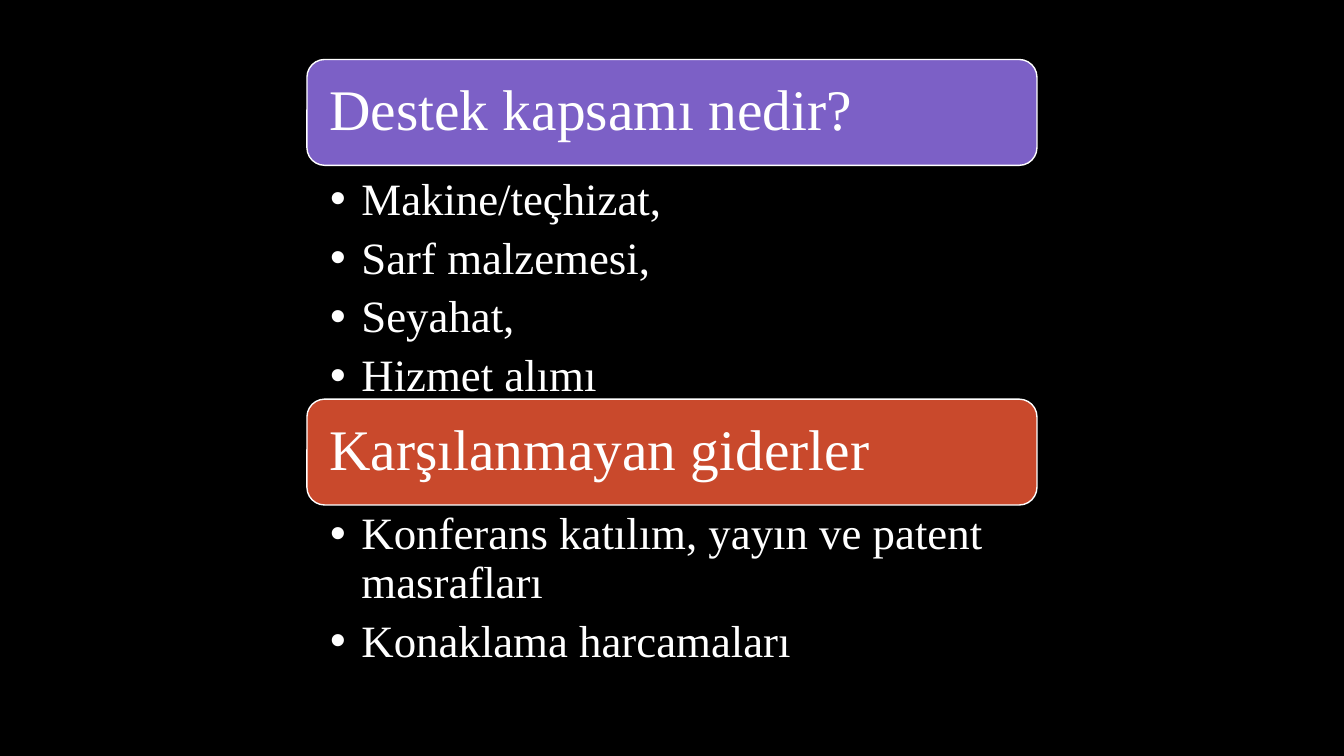
from pptx import Presentation
from pptx.dml.color import RGBColor
from pptx.enum.shapes import MSO_SHAPE
from pptx.enum.text import MSO_ANCHOR, MSO_AUTO_SIZE, PP_ALIGN
from pptx.util import Inches, Pt

ROUNDED = MSO_SHAPE.ROUNDED_RECTANGLE
MIDDLE, TOP = MSO_ANCHOR.MIDDLE, MSO_ANCHOR.TOP
LEFT = PP_ALIGN.LEFT
NO_AUTOFIT = MSO_AUTO_SIZE.NONE

# Content: each section names the placeholders that hold its heading and list
SECTIONS = [
    {"heading": "Destek kapsamı nedir?", "color": "7C60C6",
     "items": ["Makine/teçhizat,", "Sarf malzemesi,", "Seyahat,", "Hizmet alımı"],
     "placeholders": (0, 2), "top": 0.59, "list_top": 1.69, "list_height": 2.27},
    {"heading": "Karşılanmayan giderler", "color": "C9492C",
     "items": ["Konferans katılım, yayın ve patent masrafları",
               "Konaklama harcamaları"],
     "placeholders": (3, 4), "top": 3.96, "list_top": 5.01, "list_height": 1.62},
]

# Layout in inches
SLIDE_WIDTH, SLIDE_HEIGHT = 13.33, 7.5
COLUMN_WIDTH = 7.24
COLUMN_LEFT = (SLIDE_WIDTH - COLUMN_WIDTH) / 2
BAR_HEIGHT, BAR_INSET = 1.05, 0.05
BULLET_INDENT = 0.31
COMPARISON_LAYOUT, UNUSED_PLACEHOLDER = 4, 1

HEADING_FORMAT = {"size": 41, "anchor": MIDDLE, "space_after": 0,
                  "margins": (0.17, 0.17, 0.17, 0.17)}
LIST_FORMAT = {"size": 32, "anchor": TOP, "space_after": 7.5,
               "margins": (0.23, 0.06, 0.32, 0.06)}


def color(hex_value):
    return RGBColor.from_string(hex_value)


def set_all(target, values):
    for name, value in values.items():
        setattr(target, name, value)


def place(shape, left, top, width, height):
    set_all(shape, {"left": Inches(left), "top": Inches(top),
                    "width": Inches(width), "height": Inches(height)})


def write(shape, lines, style):
    frame = shape.text_frame
    frame.text = "\n".join(lines)
    left, top, right, bottom = (Inches(margin) for margin in style["margins"])
    set_all(frame, {"margin_left": left, "margin_top": top, "margin_right": right,
                    "margin_bottom": bottom, "word_wrap": True,
                    "auto_size": NO_AUTOFIT, "vertical_anchor": style["anchor"]})
    for paragraph in frame.paragraphs:
        set_all(paragraph, {"alignment": LEFT, "line_spacing": 0.9,
                            "space_before": Pt(0),
                            "space_after": Pt(style["space_after"])})
        for run in paragraph.runs:
            set_all(run.font, {"name": "Times New Roman", "bold": False,
                               "size": Pt(style["size"])})
            run.font.color.rgb = color("FFFFFF")


def add_bar(slide, top, fill):
    bar = slide.shapes.add_shape(ROUNDED, 0, 0, 0, 0)
    place(bar, COLUMN_LEFT, top, COLUMN_WIDTH, BAR_HEIGHT)
    bar.shadow.inherit = False
    bar.fill.solid()
    bar.fill.fore_color.rgb = color(fill)
    bar.line.color.rgb = color("FFFFFF")
    bar.line.width = Pt(1)
    # Send the bar behind the heading text
    slide.shapes._spTree.insert(2, bar._element)


def add_section(slide, section):
    placeholders = {shape.placeholder_format.idx: shape for shape in slide.placeholders}
    heading, bullets = (placeholders[index] for index in section["placeholders"])
    add_bar(slide, section["top"], section["color"])

    # Heading
    place(heading, COLUMN_LEFT + BAR_INSET, section["top"] + BAR_INSET,
          COLUMN_WIDTH - 2 * BAR_INSET, BAR_HEIGHT - 2 * BAR_INSET)
    write(heading, [section["heading"]], HEADING_FORMAT)

    # Bulleted list
    place(bullets, COLUMN_LEFT, section["list_top"], COLUMN_WIDTH, section["list_height"])
    write(bullets, section["items"], LIST_FORMAT)
    for paragraph in bullets.text_frame.paragraphs:
        properties = paragraph._p.get_or_add_pPr()
        properties.set("marL", str(Inches(BULLET_INDENT)))
        properties.set("indent", str(-Inches(BULLET_INDENT)))


def main():
    presentation = Presentation()
    set_all(presentation, {"slide_width": Inches(SLIDE_WIDTH),
                           "slide_height": Inches(SLIDE_HEIGHT)})
    slide = presentation.slides.add_slide(presentation.slide_layouts[COMPARISON_LAYOUT])
    slide.background.fill.solid()
    slide.background.fill.fore_color.rgb = color("000000")

    for section in SECTIONS:
        add_section(slide, section)

    unused = slide.placeholders[UNUSED_PLACEHOLDER]._element
    unused.getparent().remove(unused)
    presentation.save("out.pptx")


if __name__ == "__main__":
    main()
